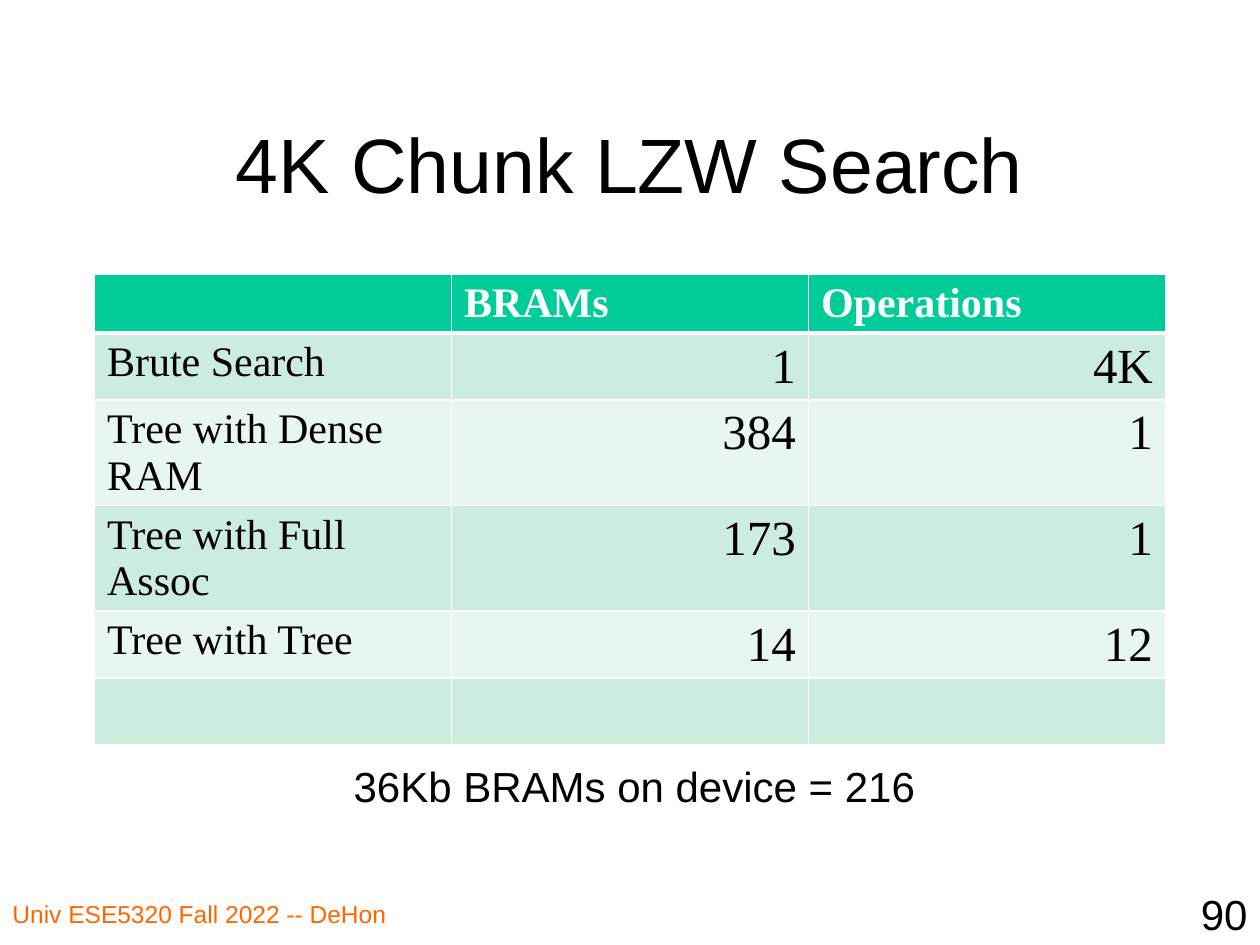
from lxml.etree import SubElement
from pptx import Presentation
from pptx.dml.color import RGBColor as RGB
from pptx.enum.text import MSO_ANCHOR as ANCHOR, PP_ALIGN as ALIGN
from pptx.oxml.ns import qn
from pptx.util import Pt

TITLE = "4K Chunk LZW Search"
ROWS = [
    ("", "BRAMs", "Operations"),
    ("Brute Search", "1", "4K"),
    ("Tree with Dense RAM", "384", "1"),
    ("Tree with Full Assoc", "173", "1"),
    ("Tree with Tree", "14", "12"),
    ("", "", ""),
]
ROW_HEIGHTS = [33.8, 38.2, 60.4, 60.4, 38.2, 38.2]
TABLE_BOX = (54, 156.5, 612, sum(ROW_HEIGHTS))
TITLE_BOX = (54, 48, 612, 90)

THEME = {
    "sans": "Arial", "serif": "Times New Roman",
    "black": RGB(0, 0, 0), "white": RGB(255, 255, 255), "orange": RGB(255, 102, 0),
    "header": RGB(0, 204, 153),
    "bands": [RGB(204, 236, 222), RGB(231, 246, 239)],
    "title": 44, "number": 28, "body": 24, "footer": 14,
}
NOTES = [
    ("Univ ESE5320 Fall 2022 -- DeHon", (0, 510, 276, 30), "footer", "orange", ALIGN.LEFT),
    ("90", (570, 504, 150, 36), "body", "black", ALIGN.RIGHT),
    ("36Kb BRAMs on device = 216", (195, 431, 372, 36), "body", "black", ALIGN.LEFT),
]


def write(tf, text, size, color="black", font="sans", align=ALIGN.LEFT, bold=False):
    p = tf.paragraphs[0]
    p.alignment = align
    r = p.add_run()
    r.text = text
    form = {"name": THEME[font], "size": Pt(THEME[size]), "bold": bold}
    for key, value in form.items():
        setattr(r.font, key, value)
    r.font.color.rgb = THEME[color]


def set_borders(cell, header):
    tcPr = cell._tc.get_or_add_tcPr()
    fill = tcPr[0]
    for side in "LRTB":
        width = 3 if header and side == "B" else 1
        ln = SubElement(tcPr, qn(f"a:ln{side}"), w=str(Pt(width)))
        SubElement(SubElement(ln, qn("a:solidFill")), qn("a:srgbClr"), val=str(THEME["white"]))
    tcPr.append(fill)


def add_title(s):
    sp = s.shapes.title
    for key, value in zip(("left", "top", "width", "height"), TITLE_BOX):
        setattr(sp, key, Pt(value))
    sp.text_frame.vertical_anchor = ANCHOR.MIDDLE
    write(sp.text_frame, TITLE, "title", align=ALIGN.CENTER)


def add_search_table(s):
    table = s.shapes.add_table(len(ROWS), len(ROWS[0]), *map(Pt, TABLE_BOX)).table
    for i, (values, height) in enumerate(zip(ROWS, ROW_HEIGHTS)):
        table.rows[i].height = Pt(height)
        header = i == 0
        for j, text in enumerate(values):
            cell = table.cell(i, j)
            cell.fill.solid()
            cell.fill.fore_color.rgb = THEME["header"] if header else THEME["bands"][(i - 1) % 2]
            set_borders(cell, header)
            number = not header and j > 0
            if text:
                write(cell.text_frame, text, "number" if number else "body",
                      "white" if header else "black", "serif",
                      ALIGN.RIGHT if number else ALIGN.LEFT, header)


def add_note(s, text, box, size, color, align):
    tf = s.shapes.add_textbox(*map(Pt, box)).text_frame
    tf.word_wrap = True
    write(tf, text, size, color, align=align)


def main():
    prs = Presentation()
    prs.slide_width, prs.slide_height = Pt(720), Pt(540)
    s = prs.slides.add_slide(prs.slide_layouts[5])
    add_title(s)
    add_search_table(s)
    for note in NOTES:
        add_note(s, *note)
    prs.save("out.pptx")


if __name__ == "__main__":
    main()
